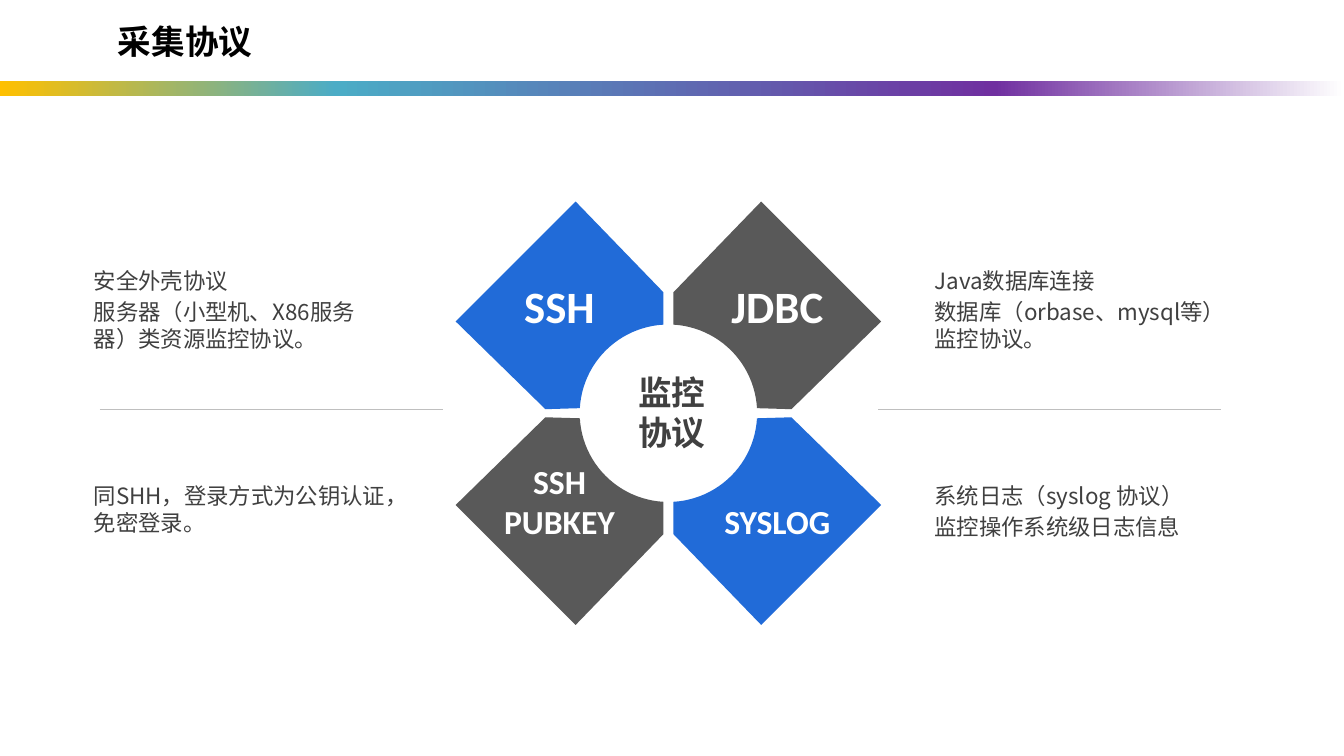
from math import asin, cos, pi, sin

from lxml import etree
from pptx import Presentation
from pptx.dml.color import RGBColor
from pptx.enum.shapes import MSO_CONNECTOR as CONNECTOR, MSO_SHAPE as SHAPE
from pptx.enum.text import MSO_ANCHOR as ANCHOR, PP_ALIGN as ALIGN
from pptx.oxml import parse_xml
from pptx.oxml.ns import nsdecls, qn
from pptx.util import Inches, Pt

WIDTH, HEIGHT = 13.33, 7.5
CJK, LATIN = "Noto Sans CJK SC", "Calibri"
BLUE, GREY, INK, RULE = "216BD8", "595959", "404040", "BFBFBF"

CENTER_X, CENTER_Y = 6.63, 4.1
HUB_RADIUS, HALF_GAP = 0.88, 0.05
# Outer corners of a petal, as distances from the centre
PETAL_CORNERS = [(HALF_GAP, 1.2), (0.92, 2.1), (2.11, 0.91), (1.22, 0.04)]
ARC_STEPS = 24

# Column side, row side, colour, label lines, label size, bottom inset
PETALS = [
    (-1, -1, BLUE, ["SSH"], 32, 0.05),
    (1, -1, GREY, ["JDBC"], 32, 0.05),
    (-1, 1, GREY, ["SSH", "PUBKEY"], 24, 0.45),
    (1, 1, BLUE, ["SYSLOG"], 24, 0.05),
]

NOTE_COLUMNS, NOTE_ROWS = (0.8, 9.14), (2.58, 4.71)
NOTES = [
    [["安全外壳协议", "服务器（小型机、X86服务器）类资源监控协议。"],
     ["Java数据库连接", "数据库（orbase、mysql等）监控协议。"]],
    [["同SHH，登录方式为公钥认证，免密登录。"],
     ["系统日志（syslog 协议）", "监控操作系统级日志信息"]],
]


def color(value):
    return RGBColor.from_string(value)


def place(shape, left, top, width, height):
    shape.left, shape.top = Inches(left), Inches(top)
    shape.width, shape.height = Inches(width), Inches(height)


def write(frame, lines, size, ink, font=CJK, bold=False, align=ALIGN.LEFT, gap=0):
    frame.word_wrap = True
    for index, line in enumerate(lines):
        paragraph = frame.add_paragraph() if index else frame.paragraphs[0]
        paragraph.alignment = align
        paragraph.space_before = Pt(gap if index else 0)
        run = paragraph.add_run()
        run.text = line
        run.font.name = font
        run.font.size = Pt(size)
        run.font.bold = bold
        run.font.color.rgb = color(ink)
        east_asian = etree.SubElement(run.font._element, qn("a:ea"))
        east_asian.set("typeface", CJK)


def add_header(slide):
    title = slide.shapes.title
    place(title, 1.07, 0.16, 9.62, 0.5)
    title.text_frame.vertical_anchor = ANCHOR.MIDDLE
    write(title.text_frame, ["采集协议"], 24, "000000", bold=True)

    bar = slide.shapes.add_shape(
        SHAPE.RECTANGLE, 0, Inches(0.8), Inches(WIDTH), Inches(0.15))
    bar.shadow.inherit = False
    bar.line.fill.background()
    bar.fill.gradient()
    bar.fill.gradient_angle = 0
    stops = bar.fill.gradient_stops._gsLst
    for stop in list(stops):
        stops.remove(stop)
    for share, value in [(0, "FFC000"), (25, "4BACC6"), (74, "7030A0"), (100, "FFFFFF")]:
        stops.append(parse_xml(
            f'<a:gs {nsdecls("a")} pos="{share * 1000}"><a:srgbClr val="{value}"/></a:gs>'))


def petal_outline(side_x, side_y):
    start = asin(HALF_GAP / HUB_RADIUS)
    angles = [start + (pi / 2 - 2 * start) * step / ARC_STEPS
              for step in range(ARC_STEPS + 1)]
    arc = [(HUB_RADIUS * cos(angle), HUB_RADIUS * sin(angle)) for angle in angles]
    return [(Inches(CENTER_X + side_x * x), Inches(CENTER_Y + side_y * y))
            for x, y in PETAL_CORNERS + arc]


def add_petal(slide, side_x, side_y, fill, lines, size, bottom_inset):
    first, *others = petal_outline(side_x, side_y)
    builder = slide.shapes.build_freeform(*first)
    builder.add_line_segments(others, close=True)
    petal = builder.convert_to_shape()
    petal.shadow.inherit = False
    petal.fill.solid()
    petal.fill.fore_color.rgb = color(fill)
    petal.line.fill.background()
    frame = petal.text_frame
    frame.vertical_anchor = ANCHOR.MIDDLE
    frame.margin_bottom = Inches(bottom_inset)
    write(frame, lines, size, "FFFFFF", LATIN, True, ALIGN.CENTER)


def add_flower(slide):
    for petal in PETALS:
        add_petal(slide, *petal)
    hub = slide.shapes.add_textbox(
        Inches(6.23), Inches(3.64), Inches(1.18), Inches(0.91))
    write(hub.text_frame, ["监控", "协议"], 24, INK, bold=True)


def add_note(slide, left, top, lines):
    note = slide.shapes.add_textbox(
        Inches(left), Inches(top), Inches(3.27), Inches(0.9))
    frame = note.text_frame
    frame.margin_left = frame.margin_right = Inches(0.13)
    frame.margin_top = frame.margin_bottom = Inches(0.07)
    write(frame, lines, 16, INK, gap=3.2)


def add_divider(slide, left):
    y = Inches(4.06)
    line = slide.shapes.add_connector(
        CONNECTOR.STRAIGHT, Inches(left), y, Inches(left + 3.4), y)
    line.line.color.rgb = color(RULE)
    line.line.width = Pt(0.5)
    etree.SubElement(line._element.spPr, qn("a:effectLst"))


def add_notes(slide):
    for left in (0.99, 8.71):
        add_divider(slide, left)
    for top, row in zip(NOTE_ROWS, NOTES):
        for left, lines in zip(NOTE_COLUMNS, row):
            add_note(slide, left, top, lines)


def main():
    presentation = Presentation()
    presentation.slide_width = Inches(WIDTH)
    presentation.slide_height = Inches(HEIGHT)
    slide = presentation.slides.add_slide(presentation.slide_layouts[5])
    add_header(slide)
    add_flower(slide)
    add_notes(slide)
    presentation.save("out.pptx")


if __name__ == "__main__":
    main()
